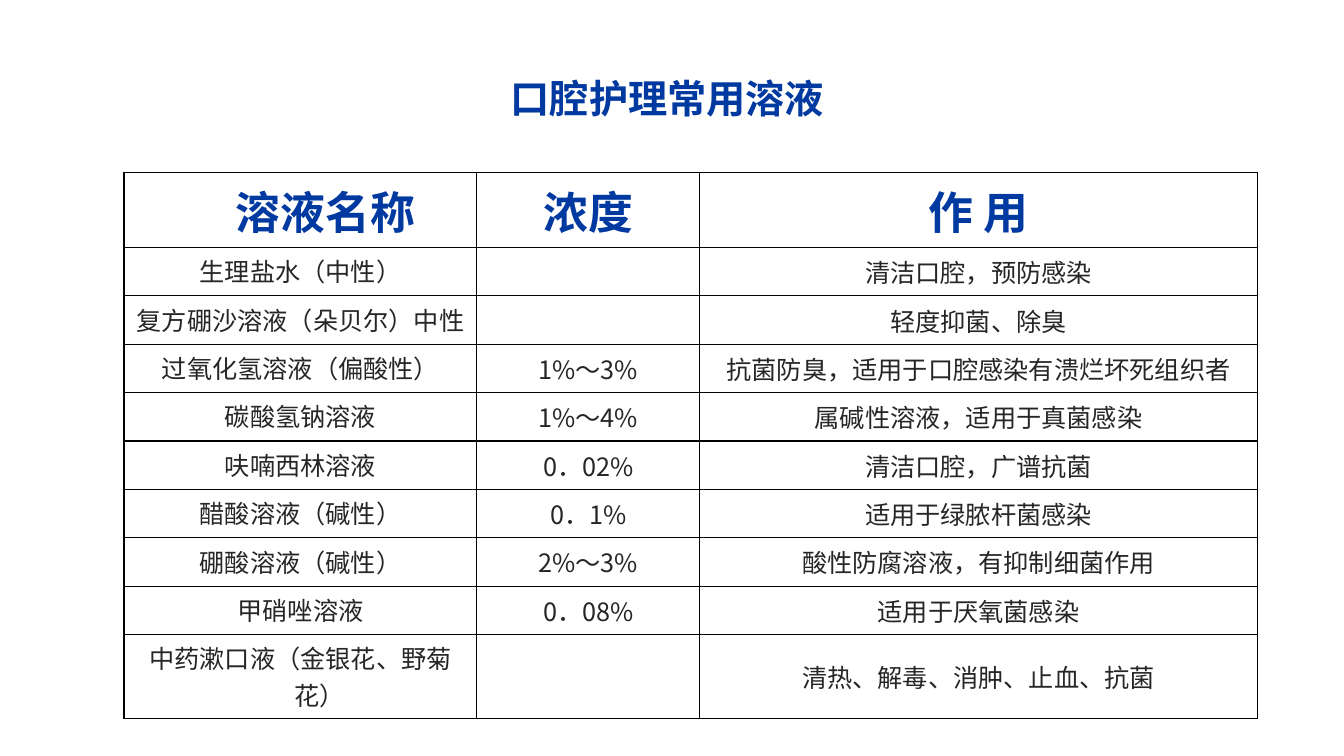
from lxml import etree
from pptx import Presentation
from pptx.dml.color import RGBColor
from pptx.enum.text import MSO_ANCHOR, MSO_AUTO_SIZE, PP_ALIGN
from pptx.oxml.ns import qn
from pptx.util import Inches, Pt

TOP, MIDDLE = MSO_ANCHOR.TOP, MSO_ANCHOR.MIDDLE
CENTER = PP_ALIGN.CENTER
NO_AUTOFIT = MSO_AUTO_SIZE.NONE

FONT = "Noto Sans CJK SC"
BLUE, DARK, BLACK, WHITE = "0039A0", "262626", "000000", "FFFFFF"

COLUMN_WIDTHS = [3.5, 2.21, 5.53]
HEADER_HEIGHT, ROW_HEIGHT, LAST_HEIGHT = 0.74, 0.48, 0.83
HANGING = 0.38
NAME_HEADER_INDENT = 0.5

SOLUTIONS = [
    ("溶液名称", "浓度", "作 用"),
    ("生理盐水（中性）", "", "清洁口腔，预防感染"),
    ("复方硼沙溶液（朵贝尔）中性", "", "轻度抑菌、除臭"),
    ("过氧化氢溶液（偏酸性）", "1%～3%", "抗菌防臭，适用于口腔感染有溃烂坏死组织者"),
    ("碳酸氢钠溶液", "1%～4%", "属碱性溶液，适用于真菌感染"),
    ("呋喃西林溶液", "0．02%", "清洁口腔，广谱抗菌"),
    ("醋酸溶液（碱性）", "0．1%", "适用于绿脓杆菌感染"),
    ("硼酸溶液（碱性）", "2%～3%", "酸性防腐溶液，有抑制细菌作用"),
    ("甲硝唑溶液", "0．08%", "适用于厌氧菌感染"),
    ("中药漱口液（金银花、野菊花）", "", "清热、解毒、消肿、止血、抗菌"),
]


def color(value):
    return RGBColor.from_string(value)


def style_paragraph(para, size, hex_color, bold):
    para.alignment = CENTER
    font = para.font
    font.size, font.bold, font.name = Pt(size), bold, FONT
    font.color.rgb = color(hex_color)
    # East Asian typeface
    defaults = para._p.pPr.find(qn("a:defRPr"))
    etree.SubElement(defaults, qn("a:ea")).set("typeface", FONT)


def indent_paragraph(para, left, first_line):
    properties = para._p.get_or_add_pPr()
    properties.set("marL", str(Inches(left)))
    properties.set("indent", str(Inches(first_line)))


def add_borders(cell):
    properties = cell._tc.get_or_add_tcPr()
    for side in ("lnL", "lnR", "lnT", "lnB"):
        line = etree.SubElement(properties, qn(f"a:{side}"), w=str(Pt(1)))
        fill = etree.SubElement(line, qn("a:solidFill"))
        etree.SubElement(fill, qn("a:srgbClr"), val=BLACK)


def add_title(page, left, top, width, height):
    title = page.shapes.title
    title.left, title.top = Inches(left), Inches(top)
    title.width, title.height = Inches(width), Inches(height)
    frame = title.text_frame
    frame.text = "口腔护理常用溶液"
    frame.word_wrap = True
    frame.auto_size = NO_AUTOFIT
    frame.vertical_anchor = TOP
    frame.margin_right = Inches(0.2)
    para = frame.paragraphs[0]
    para.line_spacing = 0.9
    style_paragraph(para, 28, BLUE, True)


def fill_cell(cell, text, is_header, is_name):
    cell.text = text
    cell.vertical_anchor = TOP if is_name else MIDDLE
    add_borders(cell)
    cell.fill.solid()
    cell.fill.fore_color.rgb = color(WHITE)
    para = cell.text_frame.paragraphs[0]
    if is_header and is_name:
        indent_paragraph(para, NAME_HEADER_INDENT, 0)
    else:
        indent_paragraph(para, HANGING, -HANGING)
    if is_header:
        style_paragraph(para, 32, BLUE, True)
    else:
        style_paragraph(para, 18, DARK, False)


def add_solution_table(page, left, top):
    heights = [HEADER_HEIGHT] + [ROW_HEIGHT] * (len(SOLUTIONS) - 2) + [LAST_HEIGHT]
    table = page.shapes.add_table(
        len(heights), len(COLUMN_WIDTHS), Inches(left), Inches(top),
        Inches(sum(COLUMN_WIDTHS)), Inches(sum(heights))).table
    for column, width in zip(table.columns, COLUMN_WIDTHS):
        column.width = Inches(width)
    for row_index, (row, height) in enumerate(zip(table.rows, heights)):
        row.height = Inches(height)
        for column_index, text in enumerate(SOLUTIONS[row_index]):
            fill_cell(row.cells[column_index], text,
                      row_index == 0, column_index == 0)


def main():
    deck = Presentation()
    deck.slide_width, deck.slide_height = Inches(13.33), Inches(7.5)
    page = deck.slides.add_slide(deck.slide_layouts[5])
    add_title(page, 2.42, 0.74, 8.5, 0.97)
    add_solution_table(page, 1.23, 1.71)
    deck.save("out.pptx")


if __name__ == "__main__":
    main()
